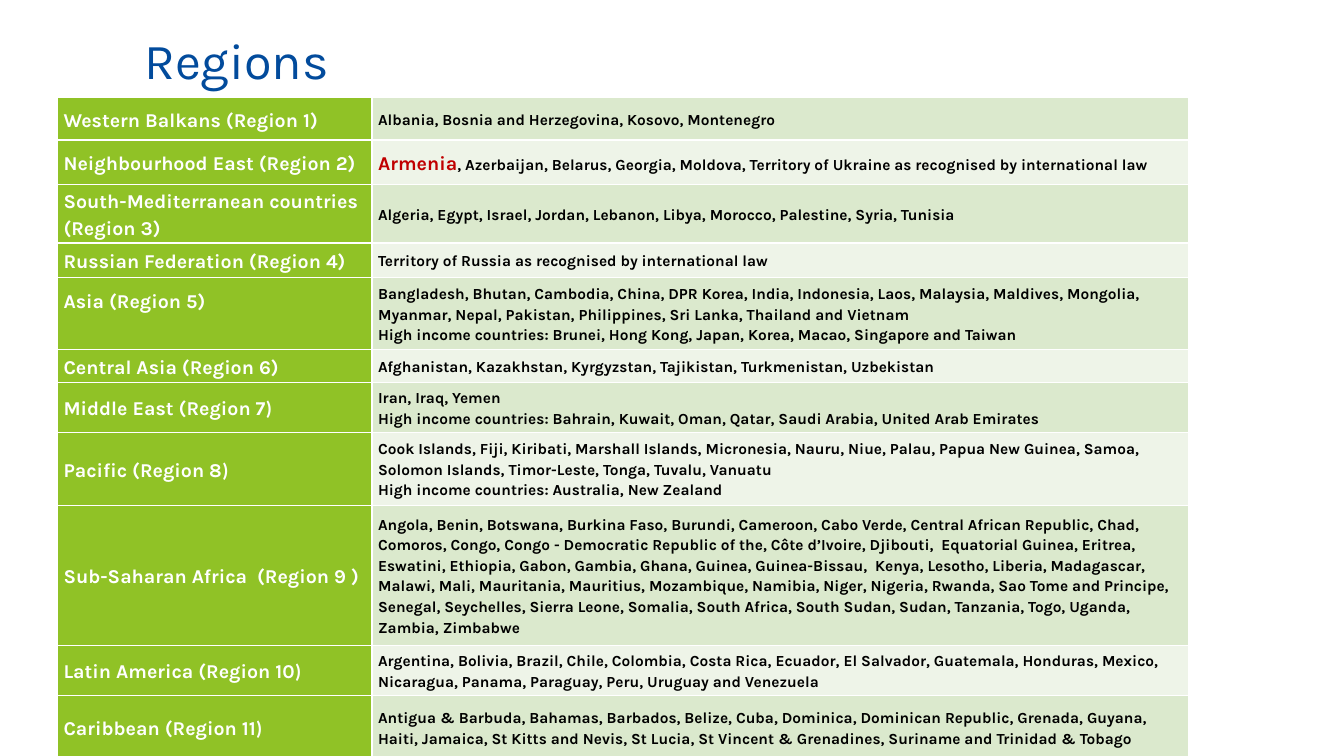
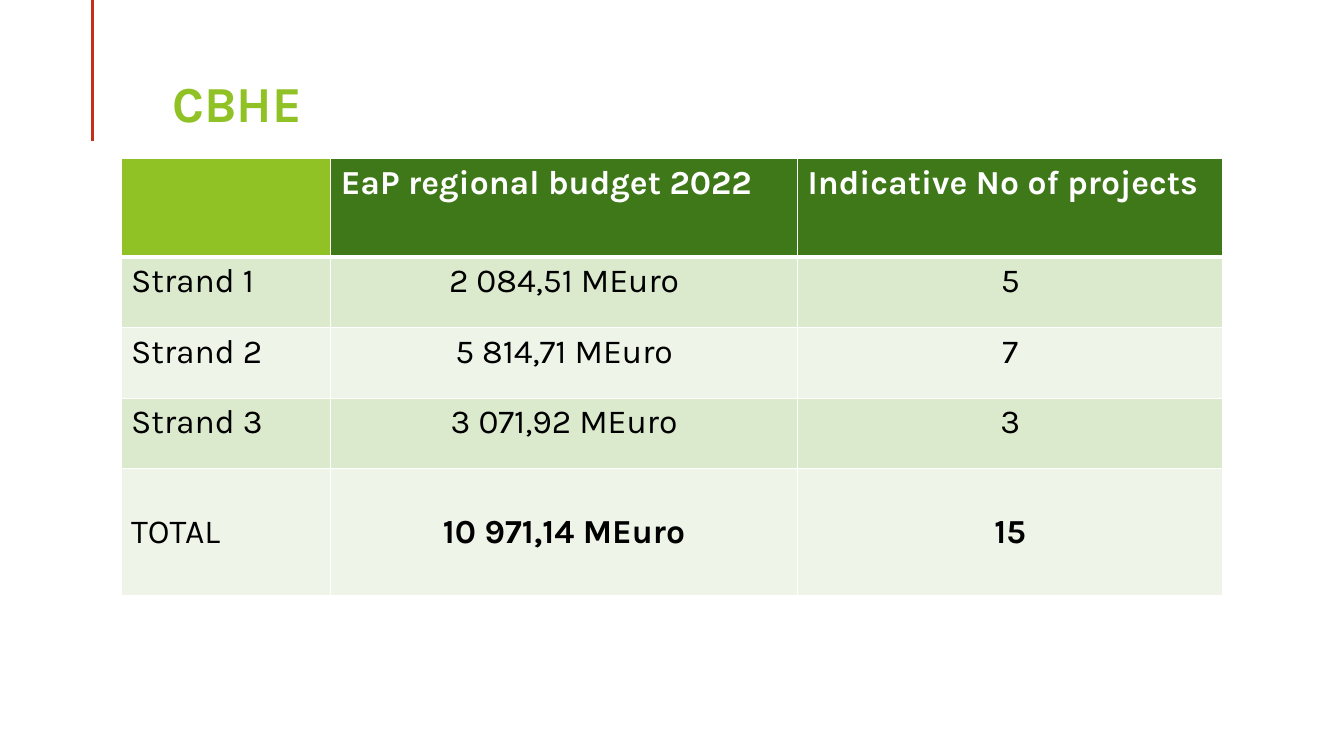
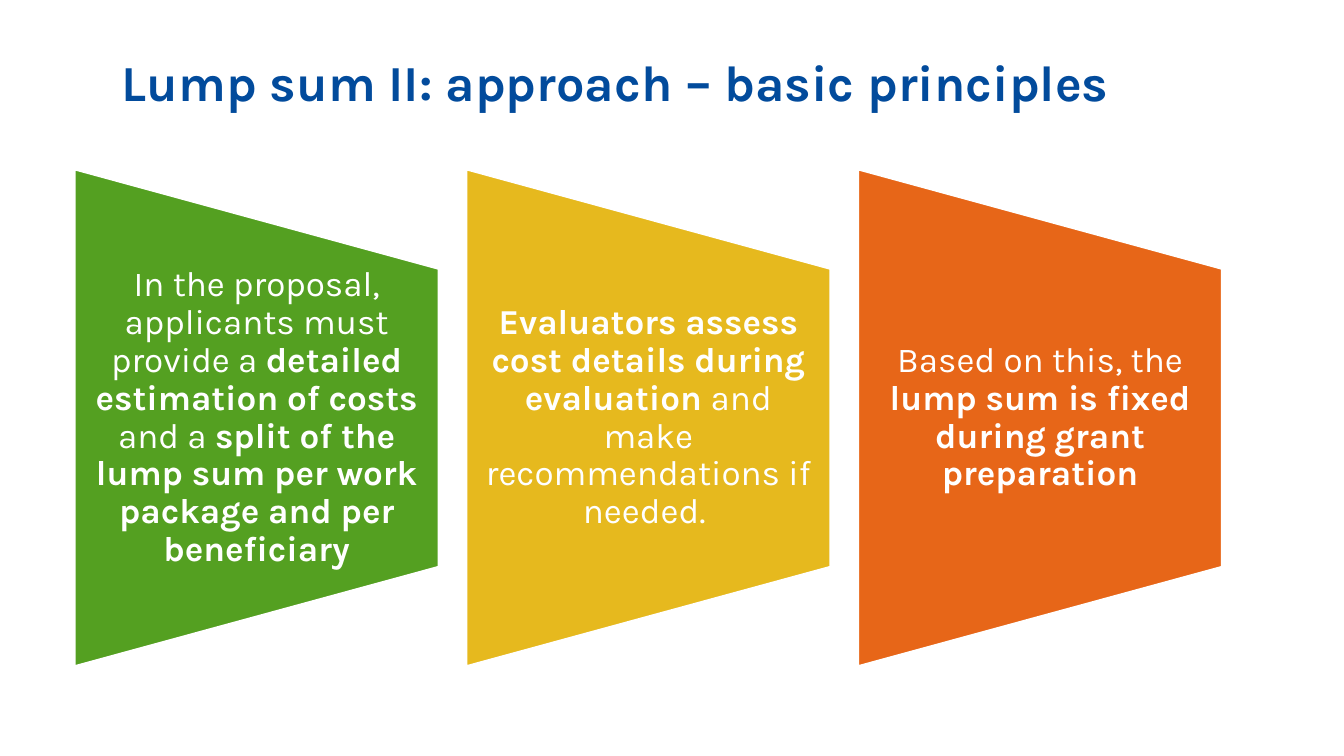
from dataclasses import dataclass
from typing import Any, NamedTuple

from lxml import etree
from pptx import Presentation
from pptx import util as u
from pptx.dml.color import RGBColor
from pptx.enum import shapes, text
from pptx.oxml.ns import qn

# Shared look
FONT = "Karla"
BLUE, LIME, FOREST, RED = "024B9C", "90C226", "3F7819", "C42F1A"
WHITE, BLACK, DARK_RED = "FFFFFF", "000000", "C00000"
BANDS = ("DBE9CD", "EEF4E8")
LEFT, CENTER = text.PP_ALIGN.LEFT, text.PP_ALIGN.CENTER
TOP, MIDDLE = text.MSO_ANCHOR.TOP, text.MSO_ANCHOR.MIDDLE


class Span(NamedTuple):
    text: str
    format: dict[str, Any] = {}


class Box(NamedTuple):
    left: float
    top: float
    width: float
    height: float

    def lengths(self) -> list[u.Length]:
        return [u.Inches(value) for value in self]


@dataclass
class Region:
    label: list[list[Span]]
    countries: list[list[Span]]
    height: float
    label_bottom: float = 0.03


@dataclass
class Step:
    color: str
    spans: list[Span]


def color(value: str) -> RGBColor:
    return RGBColor.from_string(value)


def fill(target: Any, value: str) -> None:
    target.fill.solid()
    target.fill.fore_color.rgb = color(value)


def set_all(target: Any, values: dict[str, Any]) -> None:
    for name, value in values.items():
        setattr(target, name, value)


def write(frame: Any, paras: list[list[Span]], size: float, ink: str, bold: bool = False,
          **para_format: Any) -> None:
    """Fill a text frame; each span may override the common font format."""
    for number, spans in enumerate(paras):
        para = frame.paragraphs[0] if number == 0 else frame.add_paragraph()
        set_all(para, para_format)
        for span in spans:
            run = para.add_run()
            run.text = span.text
            values = {"name": FONT, "size": u.Pt(size), "bold": bold, "ink": ink} | span.format
            run.font.color.rgb = color(values.pop("ink"))
            set_all(run.font, values)


def add_titled_page(deck: Any, title: str, box: Box, ink: str, bold: bool) -> Any:
    page = deck.slides.add_slide(deck.slide_layouts[5])
    holder = page.shapes.title
    names = ("left", "top", "width", "height")
    set_all(holder, dict(zip(names, box.lengths())))
    set_all(holder.text_frame, {"word_wrap": True, "vertical_anchor": TOP,
                                "auto_size": text.MSO_AUTO_SIZE.NONE})
    write(holder.text_frame, [[Span(title)]], 36, ink, bold, alignment=LEFT)
    return page


def add_grid(page: Any, box: Box, widths: list[float], heights: list[float]) -> Any:
    table = page.shapes.add_table(len(heights), len(widths), *box.lengths()).table
    set_all(table, {"first_row": False, "horz_banding": False})
    for column, width in zip(table.columns, widths):
        column.width = u.Inches(width)
    for row, height in zip(table.rows, heights):
        row.height = u.Inches(height)
    return table


def style_cell(cell: Any, shade: str, bottom_line: float = 1) -> None:
    """White borders on all sides, then the fill, in schema order."""
    properties = cell._tc.get_or_add_tcPr()
    for side, width in {"L": 1, "R": 1, "T": 1, "B": bottom_line}.items():
        line = etree.SubElement(properties, qn(f"a:ln{side}"), w=str(u.Pt(width)))
        solid = etree.SubElement(line, qn("a:solidFill"))
        etree.SubElement(solid, qn("a:srgbClr"), val=WHITE)
    fill(cell, shade)


def label(name: str, number: int, closing: str = FONT) -> list[list[Span]]:
    return [[Span(f"{name} (Region {number}"), Span(")", {"name": closing})]]


REGIONS = [
    Region(label("Western Balkans", 1),
           [[Span("Albania, Bosnia and Herzegovina, Kosovo, Montenegro")]], 0.42),
    Region(label("Neighbourhood East", 2),
           [[Span("Armenia", {"size": u.Pt(14), "ink": DARK_RED}),
             Span(", Azerbaijan, Belarus, Georgia, Moldova, Territory of Ukraine "
                  "as recognised by international law")]], 0.44),
    Region([[Span("South-Mediterranean countries")], [Span("(Region 3)")]],
           [[Span("Algeria, Egypt, Israel, Jordan, Lebanon, Libya, Morocco, Palestine, "
                  "Syria, Tunisia")]], 0.5),
    Region(label("Russian Federation", 4),
           [[Span("Territory of Russia as recognised by international law")]], 0.34),
    Region(label("Asia", 5),
           [[Span("Bangladesh, Bhutan, Cambodia, China, DPR Korea, India, Indonesia, Laos, "
                  "Malaysia, Maldives, Mongolia, Myanmar, Nepal, Pakistan, Philippines, "
                  "Sri Lanka, Thailand and Vietnam")],
            [Span("High income countries: Brunei, Hong Kong, Japan, Korea, Macao, "
                  "Singapore and Taiwan")]], 0.72, label_bottom=0.3),
    Region(label("Central Asia", 6),
           [[Span("Afghanistan, Kazakhstan, Kyrgyzstan, Tajikistan, Turkmenistan, "
                  "Uzbekistan")]], 0.28),
    Region(label("Middle East", 7, "Calibri"),
           [[Span("Iran, Iraq, Yemen")],
            [Span("High income countries: Bahrain, Kuwait, Oman, Qatar, Saudi Arabia, "
                  "United Arab Emirates")]], 0.5),
    Region(label("Pacific", 8, "Calibri"),
           [[Span("Cook Islands, Fiji, Kiribati, Marshall Islands, Micronesia, Nauru, Niue, "
                  "Palau, Papua New Guinea, Samoa, Solomon Islands, Timor-Leste, Tonga, "
                  "Tuvalu, Vanuatu")],
            [Span("High income countries: Australia, New Zealand")]], 0.72),
    Region([[Span("Sub-Saharan Africa  (Region 9 )")]],
           [[Span("Angola, Benin, Botswana, Burkina Faso, Burundi, Cameroon, Cabo Verde, "
                  "Central African Republic, Chad, Comoros, Congo, Congo - Democratic "
                  "Republic of the, Côte d’Ivoire, Djibouti,  Equatorial Guinea, Eritrea, "
                  "Eswatini, Ethiopia, Gabon, Gambia, Ghana, Guinea, Guinea-Bissau,  Kenya, "
                  "Lesotho, Liberia, Madagascar, Malawi, Mali, Mauritania, Mauritius, "
                  "Mozambique, Namibia, Niger, Nigeria, Rwanda, Sao Tome and Principe, "
                  "Senegal, Seychelles, Sierra Leone, Somalia, South Africa, South Sudan, "
                  "Sudan, Tanzania, Togo, Uganda, Zambia, Zimbabwe")]], 1.39),
    Region(label("Latin America", 10, "Calibri"),
           [[Span("Argentina, Bolivia, Brazil, Chile, Colombia, Costa Rica, Ecuador, "
                  "El Salvador, Guatemala, Honduras, Mexico, Nicaragua, Panama, Paraguay, "
                  "Peru, Uruguay and Venezuela")]], 0.5),
    Region(label("Caribbean", 11, "Calibri"),
           [[Span("Antigua & Barbuda, Bahamas, Barbados, Belize, Cuba, Dominica, Dominican "
                  "Republic, Grenada, Guyana, Haiti, Jamaica, St Kitts and Nevis, St Lucia, "
                  "St Vincent & Grenadines, Suriname and Trinidad & Tobago")]], 0.63),
]

BUDGET = [
    ("", "EaP regional budget 2022", "Indicative No of projects"),
    ("Strand 1", "2 084,51 MEuro", "5"),
    ("Strand 2", "5 814,71 MEuro", "7"),
    ("Strand 3", "3 071,92 MEuro", "3"),
    ("TOTAL", "10 971,14 MEuro", "15"),
]

BOLD = {"bold": True}
STEPS = [
    Step("54A021", [Span("In the proposal, applicants must provide a "),
                    Span("detailed estimation of costs ", BOLD), Span("and a "),
                    Span("split of the lump sum per work package and per beneficiary", BOLD)]),
    Step("E6B91E", [Span("Evaluators assess cost details during evaluation ", BOLD),
                    Span("and make recommendations if needed. ")]),
    Step("E76618", [Span("Based on this, the "),
                    Span("lump sum is fixed during grant preparation", BOLD)]),
]


def build_regions(deck: Any) -> None:
    page = add_titled_page(deck, "Regions", Box(1.33, 0.24, 2.3, 0.73), BLUE, False)
    table = add_grid(page, Box(0.57, 0.97, 11.22, 6.44), [3.12, 8.1],
                     [region.height for region in REGIONS])
    for number, region in enumerate(REGIONS):
        columns = (
            (region.label, 14, WHITE, LIME, region.label_bottom),
            (region.countries, 11, BLACK, BANDS[number % 2], 0.03),
        )
        for column, (paras, size, ink, shade, bottom) in enumerate(columns):
            cell = table.cell(number, column)
            style_cell(cell, shade)
            set_all(cell, {"vertical_anchor": MIDDLE,
                           "margin_left": u.Inches(0.06), "margin_right": u.Inches(0.06),
                           "margin_top": u.Inches(0.03), "margin_bottom": u.Inches(bottom)})
            write(cell.text_frame, paras, size, ink, True, line_spacing=1.15)


def build_budget(deck: Any) -> None:
    page = add_titled_page(deck, "CBHE", Box(1.61, 0.67, 4.53, 1.44), LIME, True)
    # Accent line above the title
    x = u.Inches(0.92)
    accent = page.shapes.add_connector(shapes.MSO_CONNECTOR.STRAIGHT, x, 0, x, u.Inches(1.4))
    accent.line.color.rgb = color(RED)
    accent.line.width = u.Pt(2.25)
    etree.SubElement(accent._element.spPr, qn("a:effectLst"))
    # Budget table
    table = add_grid(page, Box(1.2, 1.57, 10.92, 4.34), [2.08, 4.63, 4.22],
                     [0.98, 0.7, 0.7, 0.7, 1.26])
    table.first_row = True
    last = len(BUDGET) - 1
    for row, values in enumerate(BUDGET):
        for column, value in enumerate(values):
            cell = table.cell(row, column)
            header = row == 0
            header_shade = FOREST if column else LIME
            style_cell(cell, header_shade if header else BANDS[(row - 1) % 2],
                       3 if header else 1)
            cell.vertical_anchor = MIDDLE if row == last else TOP
            if value:
                write(cell.text_frame, [[Span(value)]], 24, WHITE if header else BLACK,
                      header or (row == last and column > 0),
                      alignment=CENTER if column and not header else LEFT)


def build_steps(deck: Any) -> None:
    page = add_titled_page(deck, "Lump sum II: approach – basic principles",
                           Box(1.11, 0.46, 11.78, 0.86), BLUE, True)
    first, last, top, width, height = 0.74, 8.51, 1.68, 3.61, 4.93
    pitch = (last - first) / (len(STEPS) - 1)
    for number, step in enumerate(STEPS):
        left = first + number * pitch
        # Turned a quarter, so the frame has width and height swapped
        shift = (height - width) / 2
        card = page.shapes.add_shape(shapes.MSO_SHAPE.FLOWCHART_MANUAL_OPERATION,
                                     *Box(left - shift, top + shift, height, width).lengths())
        card.rotation = 270
        card.shadow.inherit = False
        fill(card, step.color)
        card.line.color.rgb = color(WHITE)
        card.line.width = u.Pt(1.5)
        # Upright caption over the middle three fifths
        caption = page.shapes.add_textbox(
            *Box(left, top + height / 5, width, height * 3 / 5).lengths())
        set_all(caption.text_frame, {"word_wrap": True, "vertical_anchor": MIDDLE,
                                     "margin_left": u.Inches(0.17),
                                     "margin_right": u.Inches(0.17),
                                     "margin_top": 0, "margin_bottom": 0})
        write(caption.text_frame, [step.spans], 25, WHITE, alignment=CENTER, line_spacing=0.9)


def main() -> None:
    deck = Presentation()
    deck.slide_width, deck.slide_height = u.Inches(13.33), u.Inches(7.5)
    for build in (build_regions, build_budget, build_steps):
        build(deck)
    deck.save("out.pptx")


if __name__ == "__main__":
    main()
